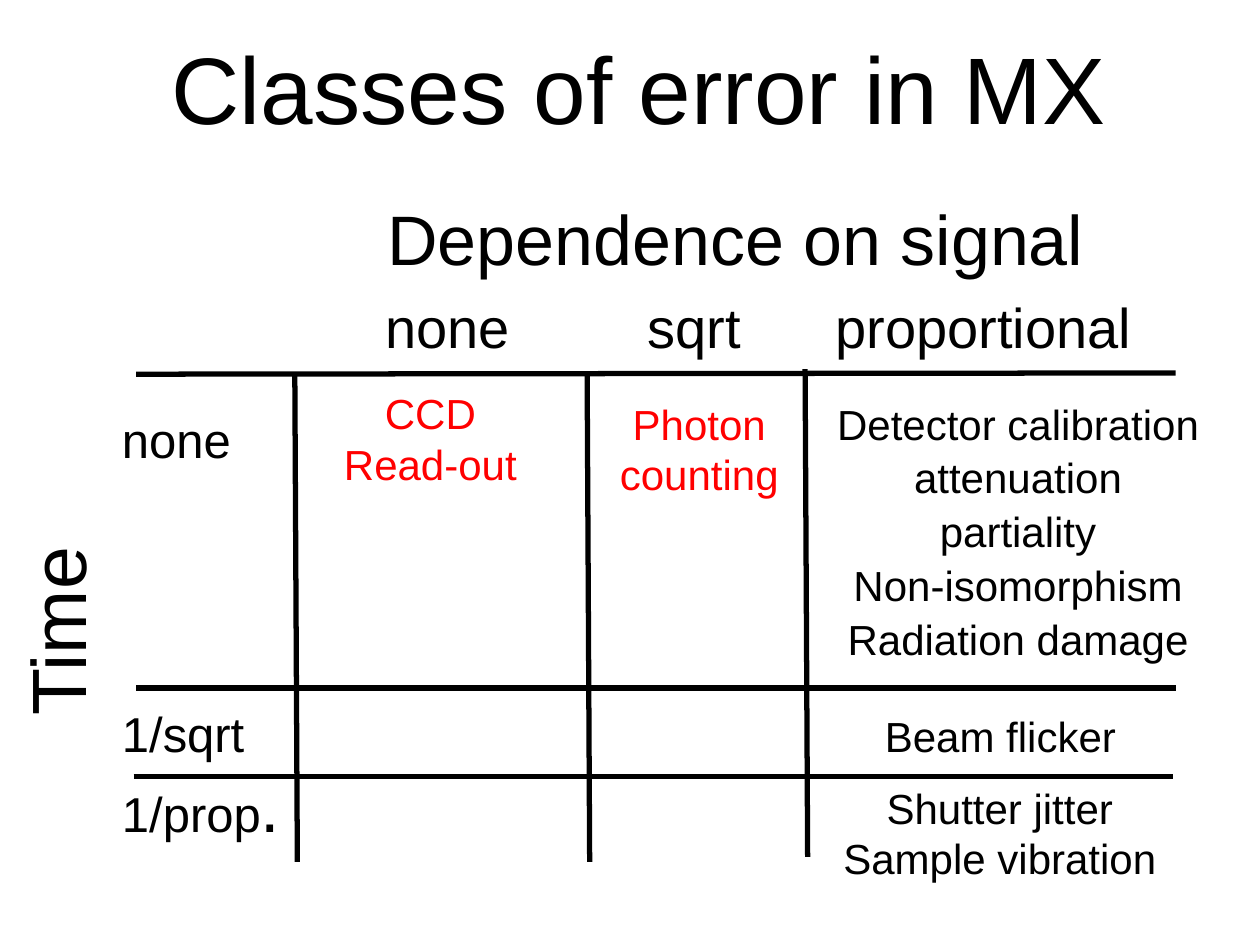
from pptx import Presentation
from pptx.dml.color import RGBColor
from pptx.enum.shapes import MSO_CONNECTOR
from pptx.enum.text import MSO_ANCHOR, PP_ALIGN
from pptx.oxml.ns import qn
from pptx.util import Inches, Pt
from lxml import etree

COLORS = {"ink": "000000", "accent": "FF0000"}
FONT = "Arial"


class SlideBuilder:
    def __init__(self, page):
        self.page = page

    def format_font(self, font, size, color="ink"):
        values = {"name": FONT, "size": Pt(size), "bold": False}
        for name, value in values.items():
            setattr(font, name, value)
        font.color.rgb = RGBColor.from_string(COLORS[color])

    def place(self, shape, area):
        for name, value in zip(("left", "top", "width", "height"), area):
            setattr(shape, name, Inches(value))

    def title(self, area, text, size):
        shape = self.page.shapes.title
        self.place(shape, area)
        frame = shape.text_frame
        frame.text = text
        frame.vertical_anchor = MSO_ANCHOR.MIDDLE
        para = frame.paragraphs[0]
        para.alignment = PP_ALIGN.CENTER
        self.format_font(para.runs[0].font, size)

    def text(self, area, lines, size, color="ink", align=PP_ALIGN.CENTER,
             wrap=False, gap=0, rotation=0):
        box = self.page.shapes.add_textbox(*map(Inches, area))
        box.rotation = rotation
        frame = box.text_frame
        frame.word_wrap = wrap
        for index, line in enumerate(lines):
            para = frame.paragraphs[0] if index == 0 else frame.add_paragraph()
            para.alignment = align
            para.space_before = Pt(gap if index else 0)
            span = para.add_run()
            span.text = line
            self.format_font(span.font, size, color)
        return frame

    def tabbed_text(self, area, words, stops, size):
        """Write words in one line, each at its own tab stop."""
        frame = self.text(area, ["\t" + "\t".join(words)], size,
                          align=PP_ALIGN.LEFT, wrap=True)
        properties = frame.paragraphs[0]._p.get_or_add_pPr()
        tabs = etree.SubElement(properties, qn("a:tabLst"))
        for stop in stops:
            etree.SubElement(tabs, qn("a:tab"), pos=str(Inches(stop)), algn="l")

    def line(self, start, end):
        rule = self.page.shapes.add_connector(
            MSO_CONNECTOR.STRAIGHT, *map(Inches, start + end))
        rule.line.color.rgb = RGBColor.from_string(COLORS["ink"])
        rule.line.width = Pt(3)
        etree.SubElement(rule._element.spPr, qn("a:effectLst"))


def main():
    deck = Presentation()
    deck.slide_width, deck.slide_height = Inches(10), Inches(7.5)
    slide = SlideBuilder(deck.slides.add_slide(deck.slide_layouts[5]))

    slide.title((0.82, 0, 8.5, 1.38), "Classes of error in MX", 54)
    slide.text((2.34, 1.5, 6.99, 0.77), ["Dependence on signal"], 40, wrap=True)
    slide.text((-0.33, 4.58, 1.55, 0.84), ["Time"], 44,
               align=PP_ALIGN.LEFT, rotation=270)
    slide.tabbed_text((2.34, 2.27, 6.98, 0.64),
                      ["none", "sqrt", "proportional"], [0.62, 2.7, 4.19], 32)

    row_labels = slide.text((0.87, 3.2, 1.47, 3.6), ["none", "1/sqrt", "1/prop"],
                            28, align=PP_ALIGN.LEFT)
    row_labels.paragraphs[1].space_before = Pt(134.4)
    period = row_labels.paragraphs[2].add_run()
    period.text = "."
    slide.format_font(period.font, 40)

    slide.text((2.62, 3.03, 1.59, 0.91), ["CCD", "Read-out"], 24, "accent")
    slide.text((4.81, 3.11, 1.48, 0.91), ["Photon", "counting"], 24, "accent")
    slide.text((6.51, 3.11, 3.14, 2.23),
               ["Detector calibration", "attenuation", "partiality",
                "Non-isomorphism", "Radiation damage"], 24, wrap=True, gap=2)
    slide.text((6.91, 5.59, 2.06, 0.51), ["Beam flicker"], 24)
    slide.text((6.58, 6.16, 2.71, 0.91), ["Shutter jitter", "Sample vibration"], 24)

    for left, top in ((2.34, 2.97), (4.66, 2.97), (6.39, 2.93)):
        slide.line((left, top), (left + 0.02, top + 3.87))
    for left, top, drop in ((1.08, 2.97, -0.01), (1.08, 5.46, 0), (1.06, 6.16, 0)):
        slide.line((left, top), (left + 8.25, top + drop))

    deck.save("out.pptx")


if __name__ == "__main__":
    main()
